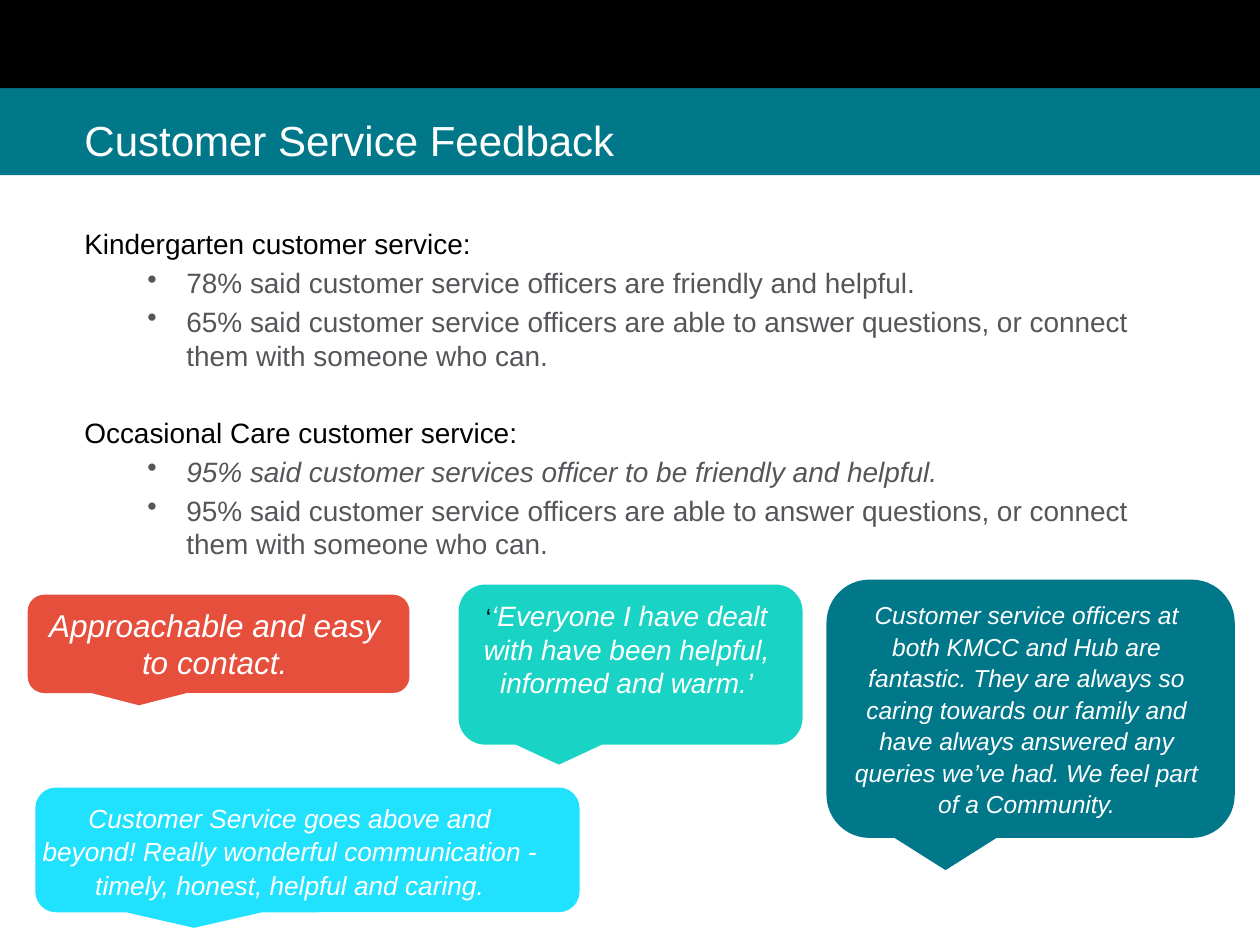
from dataclasses import dataclass

import lxml.etree
import pptx
import pptx.dml.color
import pptx.enum.shapes
import pptx.enum.text
import pptx.oxml.ns
import pptx.presentation
import pptx.shapes.autoshape
import pptx.slide
import pptx.text.text
import pptx.util

Inches = pptx.util.Inches
Pt = pptx.util.Pt
RGBColor = pptx.dml.color.RGBColor
Shape = pptx.enum.shapes.MSO_SHAPE
Align = pptx.enum.text.PP_ALIGN
Anchor = pptx.enum.text.MSO_ANCHOR

TEAL = RGBColor(0x00, 0x78, 0x8A)
RED = RGBColor(0xE7, 0x4F, 0x3D)
TURQUOISE = RGBColor(0x19, 0xD3, 0xC5)
CYAN = RGBColor(0x20, 0xE2, 0xFF)
GREY = RGBColor(0x54, 0x56, 0x5A)
BLACK = RGBColor(0, 0, 0)
WHITE = RGBColor(255, 255, 255)

Box = tuple[float, float, float, float]
NO_MARGINS: Box = (0, 0, 0, 0)
QUOTE_MARGINS: Box = (0.1, 0.05, 0.16, 0.05)


@dataclass(frozen=True)
class Line:
    text: str
    bullet: bool = False
    italic: bool = False
    space_before: float = 3


@dataclass(frozen=True)
class Quote:
    text: str
    box: Box
    fill: RGBColor
    size: float
    margins: Box = QUOTE_MARGINS
    line_spacing: float = 1.0
    opening: str = ""


FEEDBACK = [
    Line("Kindergarten customer service:", space_before=0),
    Line("78% said customer service officers are friendly and helpful.", bullet=True),
    Line("65% said customer service officers are able to answer questions, "
         "or connect them with someone who can.", bullet=True),
    Line("Occasional Care customer service:", space_before=25),
    Line("95% said customer services officer to be friendly and helpful.",
         bullet=True, italic=True),
    Line("95% said customer service officers are able to answer questions, "
         "or connect them with someone who can.", bullet=True),
]

QUOTES = [
    Quote("Approachable and easy to contact.", (0.22, 4.72, 3.03, 0.78), RED, 18),
    Quote("‘Everyone I have dealt with have been helpful, informed and warm.’",
          (3.64, 4.64, 2.73, 1.27), TURQUOISE, 16, opening="‘"),
    Quote("Customer service officers at both KMCC and Hub are fantastic. "
          "They are always so caring towards our family and have always answered "
          "any queries we’ve had. We feel part of a Community.",
          (6.56, 4.6, 3.24, 2.05), TEAL, 14, line_spacing=1.07),
    Quote("Customer Service goes above and beyond! Really wonderful communication - "
          "timely, honest, helpful and caring.",
          (0.28, 6.25, 4.32, 0.99), CYAN, 15,
          margins=(0, 0.05, 0.28, 0.05), line_spacing=1.07),
]


def set_format(target: object, values: dict[str, object]) -> None:
    for name, value in values.items():
        setattr(target, name, value)


def add_run(paragraph: pptx.text.text._Paragraph, text: str, size: float,
            color: RGBColor, italic: bool = False) -> None:
    run = paragraph.add_run()
    run.text = text
    set_format(run.font, {"name": "Arial", "size": Pt(size), "italic": italic})
    run.font.color.rgb = color


def set_frame(frame: pptx.text.text.TextFrame, margins: Box,
              anchor: Anchor = Anchor.TOP) -> None:
    left, top, right, bottom = map(Inches, margins)
    set_format(frame, {
        "word_wrap": True,
        "vertical_anchor": anchor,
        "margin_left": left,
        "margin_top": top,
        "margin_right": right,
        "margin_bottom": bottom,
    })


def add_block(slide: pptx.slide.Slide, kind: Shape, box: Box,
              fill: RGBColor) -> pptx.shapes.autoshape.Shape:
    shape = slide.shapes.add_shape(kind, *map(Inches, box))
    shape.shadow.inherit = False
    shape.fill.solid()
    shape.fill.fore_color.rgb = fill
    shape.line.fill.background()
    return shape


def add_title(slide: pptx.slide.Slide, text: str) -> None:
    frame = slide.shapes.add_textbox(*map(Inches, (0.67, 0.42, 8.75, 0.89))).text_frame
    set_frame(frame, NO_MARGINS, Anchor.BOTTOM)
    add_run(frame.paragraphs[0], text, 24, WHITE)


def add_bullet(paragraph: pptx.text.text._Paragraph) -> None:
    properties = paragraph._p.get_or_add_pPr()
    properties.set("marL", str(Inches(0.81)))
    properties.set("indent", str(Inches(-0.31)))
    bullet = lxml.etree.SubElement(properties, pptx.oxml.ns.qn("a:buChar"))
    bullet.set("char", "•")


def add_feedback(slide: pptx.slide.Slide, lines: list[Line]) -> None:
    frame = slide.shapes.add_textbox(*map(Inches, (0.67, 1.8, 8.74, 5.28))).text_frame
    set_frame(frame, NO_MARGINS)
    for index, line in enumerate(lines):
        paragraph = frame.add_paragraph() if index else frame.paragraphs[0]
        if line.bullet:
            add_bullet(paragraph)
        paragraph.space_before = Pt(line.space_before)
        add_run(paragraph, line.text, 16, GREY if line.bullet else BLACK, line.italic)


def add_quote(slide: pptx.slide.Slide, quote: Quote) -> None:
    shape = add_block(slide, Shape.ROUNDED_RECTANGULAR_CALLOUT, quote.box, quote.fill)
    set_frame(shape.text_frame, quote.margins)
    paragraph = shape.text_frame.paragraphs[0]
    set_format(paragraph, {"alignment": Align.CENTER, "line_spacing": quote.line_spacing})
    if quote.opening:
        add_run(paragraph, quote.opening, 14, BLACK)
    add_run(paragraph, quote.text, quote.size, WHITE, italic=True)


def main() -> None:
    presentation = pptx.Presentation()
    set_format(presentation, {"slide_width": Inches(10), "slide_height": Inches(7.5)})
    slide = presentation.slides.add_slide(presentation.slide_layouts[6])
    add_block(slide, Shape.RECTANGLE, (0, 0, 10, 1.39), TEAL)
    add_block(slide, Shape.RECTANGLE, (0, 0, 10, 0.7), BLACK)
    add_feedback(slide, FEEDBACK)
    add_title(slide, "Customer Service Feedback")
    for quote in QUOTES:
        add_quote(slide, quote)
    presentation.save("out.pptx")


if __name__ == "__main__":
    main()
